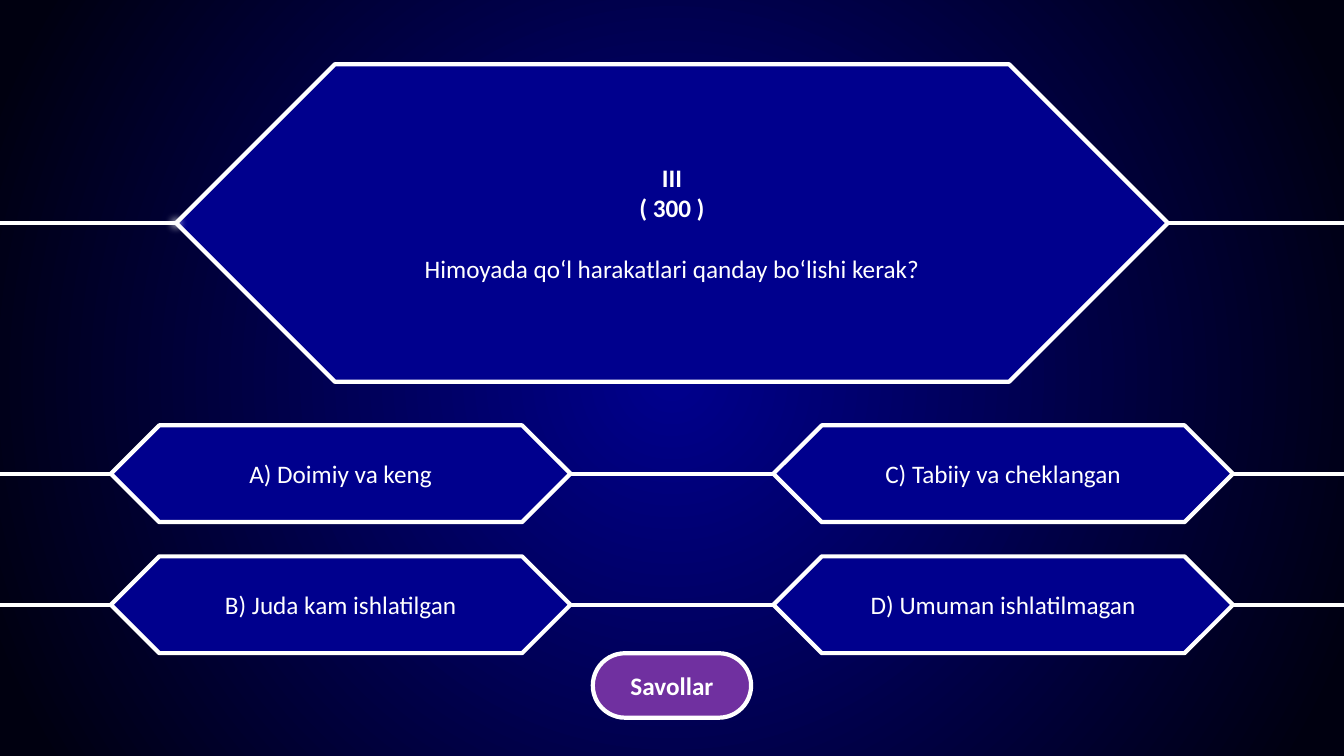
"""Build a quiz slide with one question, four answers and a button."""
from dataclasses import dataclass

import pptx
import pptx.dml.color
import pptx.enum.shapes
import pptx.enum.text
import pptx.oxml
import pptx.oxml.ns
import pptx.util
from lxml import etree

MSO = pptx.enum.shapes.MSO_SHAPE
WIDTH, HEIGHT = pptx.util.Inches(13.33), pptx.util.Inches(7.5)
FONT, SIZE = "Calibri", 18
NAVY, NIGHT, WHITE, PURPLE, RIM = "00008D", "000010", "FFFFFF", "7030A0", "325491"
MIDDLE, COLUMNS = 50, (25.35, 74.64)
QUESTION_ROW, ANSWER_ROWS, BUTTON_ROW = 29.5, (62.67, 80), 90.67
QUESTION_WIDTH = 73.8


@dataclass(frozen=True)
class Line:
    text: str
    bold: bool = False
    before: float = 0


@dataclass(frozen=True)
class Panel:
    """A shape by its centre and size, in percent of the slide."""
    cx: float
    cy: float
    w: float
    h: float
    lines: tuple[Line, ...] = ()
    kind: MSO = MSO.SNIP_2_DIAG_RECTANGLE
    fill: str = NAVY
    rim: str = WHITE
    rim_width: float = 3
    soft: float = 0


ANSWERS = (("A) Doimiy va keng", "B) Juda kam ishlatilgan"),
           ("C) Tabiiy va cheklangan", "D) Umuman ishlatilmagan"))
QUESTION = Panel(MIDDLE, QUESTION_ROW, QUESTION_WIDTH, 42, (
    Line("III", True),
    Line("( 300 )", True),
    Line("Himoyada qo‘l harakatlari qanday bo‘lishi kerak?", before=22)))
BUTTON = Panel(MIDDLE, BUTTON_ROW, 11.78, 8.53, (Line("Savollar", True),),
               MSO.ROUNDED_RECTANGLE, PURPLE)
GLOWS = [Panel(MIDDLE - QUESTION_WIDTH / 2, QUESTION_ROW, w, h,
               kind=MSO.OVAL, fill=WHITE, rim=RIM, rim_width=1, soft=soft)
         for w, h, soft in ((2.25, 4, 6), (0.75, 1.33, 2.5))]


def color(value: str) -> pptx.dml.color.RGBColor:
    return pptx.dml.color.RGBColor.from_string(value)


def across(percent: float) -> int:
    return round(WIDTH * percent / 100)


def down(percent: float) -> int:
    return round(HEIGHT * percent / 100)


def paint_background(s: pptx.slide.Slide) -> None:
    fill = s.background.fill
    fill.gradient()
    for stop, position, value in zip(fill.gradient_stops, (0, 0.95), (NAVY, NIGHT)):
        stop.position = position
        stop.color.rgb = color(value)
    grad = next(s.element.iter(pptx.oxml.ns.qn("a:gradFill")))
    for lin in grad.findall(pptx.oxml.ns.qn("a:lin")):
        grad.remove(lin)
    radial = etree.SubElement(grad, pptx.oxml.ns.qn("a:path"), path="circle")
    etree.SubElement(radial, pptx.oxml.ns.qn("a:fillToRect"),
                     dict.fromkeys("ltrb", "50000"))


def draw_wire(s: pptx.slide.Slide, row: float) -> None:
    wire = s.shapes.add_connector(pptx.enum.shapes.MSO_CONNECTOR.STRAIGHT,
                                  WIDTH, down(row), 0, down(row))
    wire.line.color.rgb = color(WHITE)
    wire.line.width = pptx.util.Pt(3)
    etree.SubElement(wire.element.spPr, pptx.oxml.ns.qn("a:effectLst"))


def write_lines(tf: pptx.text.text.TextFrame, lines: tuple[Line, ...]) -> None:
    tf.word_wrap = True
    tf.vertical_anchor = pptx.enum.text.MSO_ANCHOR.MIDDLE
    tf.text = "\n".join(line.text for line in lines)
    for p, line in zip(tf.paragraphs, lines):
        p.alignment = pptx.enum.text.PP_ALIGN.CENTER
        if line.before:
            p.space_before = pptx.util.Pt(line.before)
        for r in p.runs:
            r.font.name = FONT
            r.font.size = pptx.util.Pt(SIZE)
            r.font.bold = line.bold
            r.font.color.rgb = color(WHITE)


def draw_panel(s: pptx.slide.Slide, panel: Panel) -> None:
    sp = s.shapes.add_shape(panel.kind,
                            across(panel.cx - panel.w / 2), down(panel.cy - panel.h / 2),
                            across(panel.w), down(panel.h))
    for i in range(len(sp.adjustments)):
        sp.adjustments[i] = 0.5
    sp.fill.solid()
    sp.fill.fore_color.rgb = color(panel.fill)
    sp.line.color.rgb = color(panel.rim)
    sp.line.width = pptx.util.Pt(panel.rim_width)
    sp.shadow.inherit = False
    if panel.soft:
        effects = sp.element.spPr.find(pptx.oxml.ns.qn("a:effectLst"))
        etree.SubElement(effects, pptx.oxml.ns.qn("a:softEdge"),
                         rad=str(int(pptx.util.Pt(panel.soft))))
    if panel.lines:
        write_lines(sp.text_frame, panel.lines)


def main() -> None:
    prs = pptx.Presentation()
    prs.slide_width, prs.slide_height = WIDTH, HEIGHT
    s = prs.slides.add_slide(prs.slide_layouts[6])
    paint_background(s)
    for row in (*ANSWER_ROWS, QUESTION_ROW):
        draw_wire(s, row)
    for cx, answers in zip(COLUMNS, ANSWERS):
        for cy, answer in zip(ANSWER_ROWS, answers):
            draw_panel(s, Panel(cx, cy, 34.2, 12.8, (Line(answer),)))
    for panel in (QUESTION, *GLOWS, BUTTON):
        draw_panel(s, panel)
    prs.save("out.pptx")


if __name__ == "__main__":
    main()
